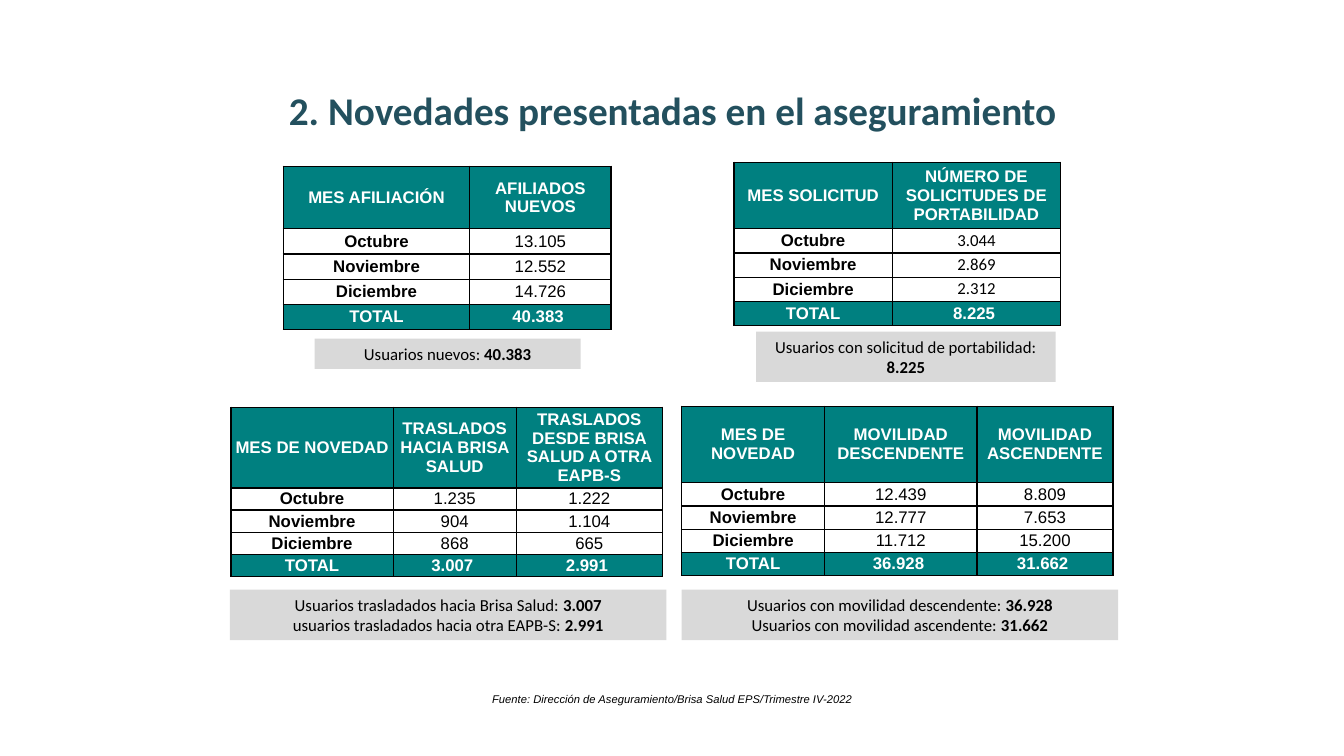
from dataclasses import dataclass
from lxml.etree import SubElement
from pptx import Presentation
from pptx.dml.color import RGBColor
from pptx.enum.shapes import MSO_SHAPE
from pptx.enum.text import MSO_ANCHOR, PP_ALIGN
from pptx.oxml.ns import qn
from pptx.util import Inches, Pt


@dataclass(frozen=True)
class Theme:
    title: str = "23505E"
    teal: str = "008080"
    gray: str = "D9D9D9"
    white: str = "FFFFFF"
    black: str = "000000"
    head: int = 28
    body: int = 12
    note: int = 8
    sans: str = "Calibri"
    grid: str = "Arial"


THEME = Theme()
MONTHS = ["Octubre", "Noviembre", "Diciembre"]


def write(para, text, size=THEME.body, face=THEME.sans, color=THEME.black,
          bold=False, italic=False):
    para.alignment = PP_ALIGN.CENTER
    run = para.add_run()
    run.text = text
    font = run.font
    font.size, font.name = Pt(size), face
    font.bold, font.italic = bold, italic
    font.color.rgb = RGBColor.from_string(color)


def add_label(slide, box, text, **style):
    frame = slide.shapes.add_textbox(*map(Inches, box)).text_frame
    frame.word_wrap = True
    write(frame.paragraphs[0], text, **style)


def add_total(slide, box, lines):
    shape = slide.shapes.add_shape(MSO_SHAPE.RECTANGLE, *map(Inches, box))
    shape.shadow.inherit = False
    shape.fill.solid()
    shape.fill.fore_color.rgb = RGBColor.from_string(THEME.gray)
    shape.line.fill.background()
    frame = shape.text_frame
    frame.word_wrap = True
    for i, (label, value) in enumerate(lines):
        para = frame.add_paragraph() if i else frame.paragraphs[0]
        write(para, label + ": ")
        write(para, value, bold=True)


def add_edges(cell):
    props = cell._tc.get_or_add_tcPr()
    for side in ("lnL", "lnR", "lnT", "lnB"):
        line = SubElement(props, qn("a:" + side), w=str(Pt(1)))
        fill = SubElement(line, qn("a:solidFill"))
        SubElement(fill, qn("a:srgbClr"), val=THEME.black)


def fill_cell(cell, text, strong, bold, face):
    cell.margin_left = cell.margin_right = 0
    cell.margin_top = cell.margin_bottom = 0
    cell.vertical_anchor = MSO_ANCHOR.MIDDLE
    add_edges(cell)
    if strong:
        cell.fill.solid()
        cell.fill.fore_color.rgb = RGBColor.from_string(THEME.teal)
    else:
        cell.fill.background()
    write(cell.text_frame.paragraphs[0], text, face=face, bold=bold,
          color=THEME.white if strong else THEME.black)


def add_grid(slide, left, top, widths, head, step, titles, series,
             face=THEME.grid):
    names = [titles[0], *MONTHS, "TOTAL"]
    rows = list(zip(names, *([title, *values] for title, values
                             in zip(titles[1:], series))))
    last = len(rows) - 1
    box = (left, top, sum(widths), head + step * last)
    table = slide.shapes.add_table(
        len(rows), len(widths), *map(Inches, box)).table
    for col, width in zip(table.columns, widths):
        col.width = Inches(width)
    for r, row in enumerate(rows):
        table.rows[r].height = Inches(step if r else head)
        strong = r in (0, last)
        for c, text in enumerate(row):
            plain = c > 0 and not strong
            fill_cell(table.cell(r, c), text, strong, not plain,
                      face if plain else THEME.grid)


def main():
    deck = Presentation()
    deck.slide_width, deck.slide_height = Inches(13.33), Inches(7.5)
    slide = deck.slides.add_slide(deck.slide_layouts[6])

    add_label(slide, (2.66, 0.81, 8.02, 0.57),
              "2. Novedades presentadas en el aseguramiento",
              size=THEME.head, color=THEME.title, bold=True)

    add_total(slide, (3.12, 3.36, 2.64, 0.3), [("Usuarios nuevos", "40.383")])
    add_total(slide, (7.5, 3.29, 2.97, 0.5),
              [("Usuarios con solicitud de portabilidad", "8.225")])
    add_total(slide, (2.28, 5.85, 4.33, 0.5),
              [("Usuarios trasladados hacia Brisa Salud", "3.007"),
               ("usuarios trasladados hacia otra EAPB-S", "2.991")])
    add_total(slide, (6.76, 5.85, 4.33, 0.5),
              [("Usuarios con movilidad descendente", "36.928"),
               ("Usuarios con movilidad ascendente", "31.662")])

    add_grid(slide, 2.81, 1.65, [1.85, 1.4], 0.62, 0.25,
             ["MES AFILIACIÓN", "AFILIADOS NUEVOS"],
             [["13.105", "12.552", "14.726", "40.383 "]])
    add_grid(slide, 7.28, 1.61, [1.57, 1.67], 0.66, 0.24,
             ["MES SOLICITUD", "NÚMERO DE SOLICITUDES DE PORTABILIDAD"],
             [["3.044", "2.869", "2.312", "8.225 "]], face=THEME.sans)
    add_grid(slide, 2.29, 4.04, [1.61, 1.22, 1.45], 0.8, 0.22,
             ["MES DE NOVEDAD", "TRASLADOS HACIA BRISA SALUD",
              "TRASLADOS DESDE BRISA SALUD A OTRA EAPB-S"],
             [["1.235", "904", "868", "3.007 "],
              ["1.222", "1.104", "665", "2.991 "]])
    add_grid(slide, 6.76, 4.03, [1.42, 1.51, 1.35], 0.76, 0.23,
             ["MES DE NOVEDAD", "MOVILIDAD DESCENDENTE",
              "MOVILIDAD ASCENDENTE"],
             [["12.439", "12.777", "11.712", "36.928 "],
              ["8.809", "7.653", "15.200", "31.662 "]])

    add_label(slide, (3.42, 6.82, 6.5, 0.24),
              "Fuente: Dirección de Aseguramiento/Brisa Salud EPS/"
              "Trimestre IV-2022",
              size=THEME.note, face=THEME.grid, italic=True)
    deck.save("out.pptx")


if __name__ == "__main__":
    main()
